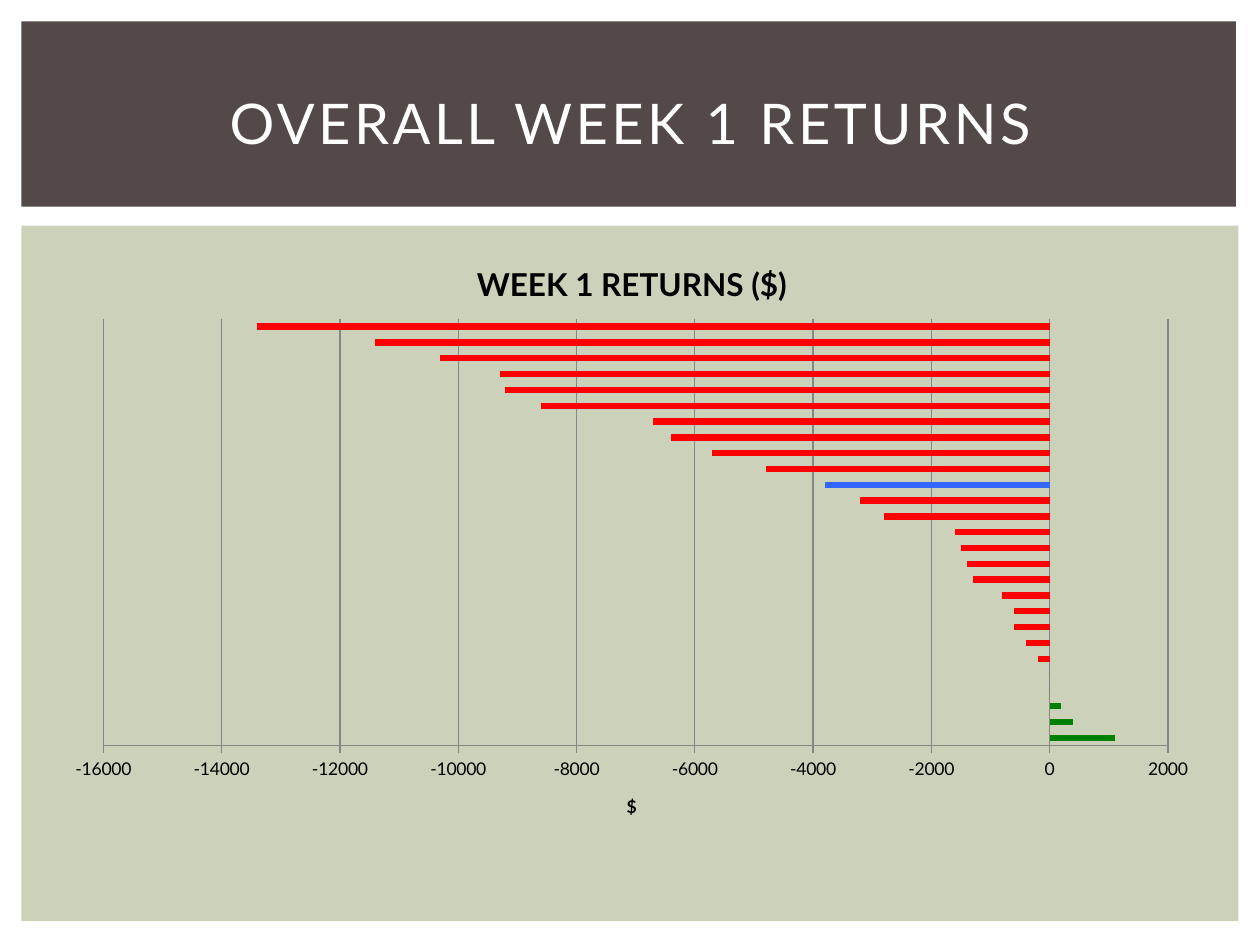
from lxml import etree
from pptx import Presentation
from pptx.chart.data import CategoryChartData
from pptx.dml.color import RGBColor
from pptx.enum import chart as ch, shapes, text
from pptx.util import Inches, Pt

FONT = "Lato"
WHITE = RGBColor(0xFF, 0xFF, 0xFF)
BLACK = RGBColor(0, 0, 0)
BROWN = RGBColor(0x53, 0x49, 0x49)
SAGE = RGBColor(0xCC, 0xD1, 0xB9)
GRAY = RGBColor(0x86, 0x86, 0x86)
GREEN = RGBColor(0x00, 0x80, 0x00)
RED = RGBColor(0xFF, 0, 0)
BLUE = RGBColor(0x33, 0x66, 0xFF)

HEAD = "OVERALL WEEK 1 RETURNS"
NAME = "WEEK 1 RETURNS ($)"
UNIT = "$"
GAINS = [1100, 400, 200, 0, 0,
         -200, -400, -600, -600, -800, -1300, -1400, -1500, -1600,
         -2800, -3200, -3800, -4800, -5700, -6400, -6700,
         -8600, -9200, -9300, -10300, -11400, -13400]
MARKED = 16
PANELS = [((0.17, 1.79, 9.66, 5.52), SAGE), ((0.17, 0.17, 9.64, 1.47), BROWN)]
CHART = (0.42, 1.88, 9.19, 4.82)
PLOT = (0.4, 0.65, 8.45, 3.39)  # inches inside the chart


def inch(box):
    return [Inches(n) for n in box]


def write(frame, words, size, color, bold):
    para = frame.paragraphs[0]
    run = para.add_run()
    run.text = words
    font = run.font
    font.name, font.size, font.bold = FONT, Pt(size), bold
    font.color.rgb = color
    return para, run


def add_panel(slide, box, color):
    panel = slide.shapes.add_shape(shapes.MSO_SHAPE.RECTANGLE, *inch(box))
    panel.shadow.inherit = False
    panel.fill.solid()
    panel.fill.fore_color.rgb = color
    panel.line.fill.background()


def add_head(slide):
    head = slide.shapes.title
    head.left, head.top, head.width, head.height = inch((0.42, 0.39, 9.17, 1.15))
    head.text_frame.vertical_anchor = text.MSO_ANCHOR.MIDDLE
    para, run = write(head.text_frame, HEAD, 32, WHITE, False)
    para.alignment = text.PP_ALIGN.CENTER
    run.font._element.set("spc", "200")
    slide.shapes._spTree.append(head._element)  # in front of the panels


def set_plot(chart):
    """Fix the inner plot area as fractions of the chart."""
    area = chart._chartSpace.chart.plotArea
    ns = "{" + area.nsmap["c"] + "}"
    for old in area.findall(ns + "layout"):
        area.remove(old)
    layout = etree.Element(ns + "layout")
    area.insert(0, layout)
    manual = etree.SubElement(layout, ns + "manualLayout")
    parts = [("layoutTarget", "inner"), ("xMode", "edge"), ("yMode", "edge")]
    wide, high = CHART[2:]
    parts += [(tag, size / full)
              for tag, size, full in zip("xywh", PLOT, (wide, high) * 2)]
    for tag, val in parts:
        etree.SubElement(manual, ns + tag).set("val", str(val))


def add_bars(slide):
    data = CategoryChartData()
    data.categories = [str(n + 1) for n in range(len(GAINS))]
    data.add_series("Series 1", GAINS)
    chart = slide.shapes.add_chart(ch.XL_CHART_TYPE.BAR_CLUSTERED,
                                   *inch(CHART), data).chart
    chart.has_legend = False
    chart.font.name, chart.font.size = FONT, Pt(10)
    chart.font.color.rgb = BLACK
    chart.has_title = True
    write(chart.chart_title.text_frame, NAME, 18, BLACK, True)
    chart.chart_title.include_in_layout = False

    chart.category_axis.visible = False
    axis = chart.value_axis
    axis.minimum_scale, axis.maximum_scale, axis.major_unit = -16000, 2000, 2000
    axis.major_tick_mark = ch.XL_TICK_MARK.OUTSIDE
    axis.has_major_gridlines = True
    for line in (axis.format.line, axis.major_gridlines.format.line):
        line.color.rgb = GRAY
        line.width = Pt(0.75)
    axis.has_title = True
    write(axis.axis_title.text_frame, UNIT, 10, BLACK, True)

    plot = chart.plots[0]
    plot.gap_width = 150
    plot.vary_by_categories = False
    bars = plot.series[0]
    bars.invert_if_negative = False
    for n, gain in enumerate(GAINS):
        fill = bars.points[n].format.fill
        fill.solid()
        fill.fore_color.rgb = BLUE if n == MARKED else RED if gain < 0 else GREEN
    set_plot(chart)


def main():
    deck = Presentation()
    deck.slide_width, deck.slide_height = Inches(10), Inches(7.5)
    slide = deck.slides.add_slide(deck.slide_layouts[5])
    for box, color in PANELS:
        add_panel(slide, box, color)
    add_head(slide)
    add_bars(slide)
    deck.save("out.pptx")


if __name__ == "__main__":
    main()
